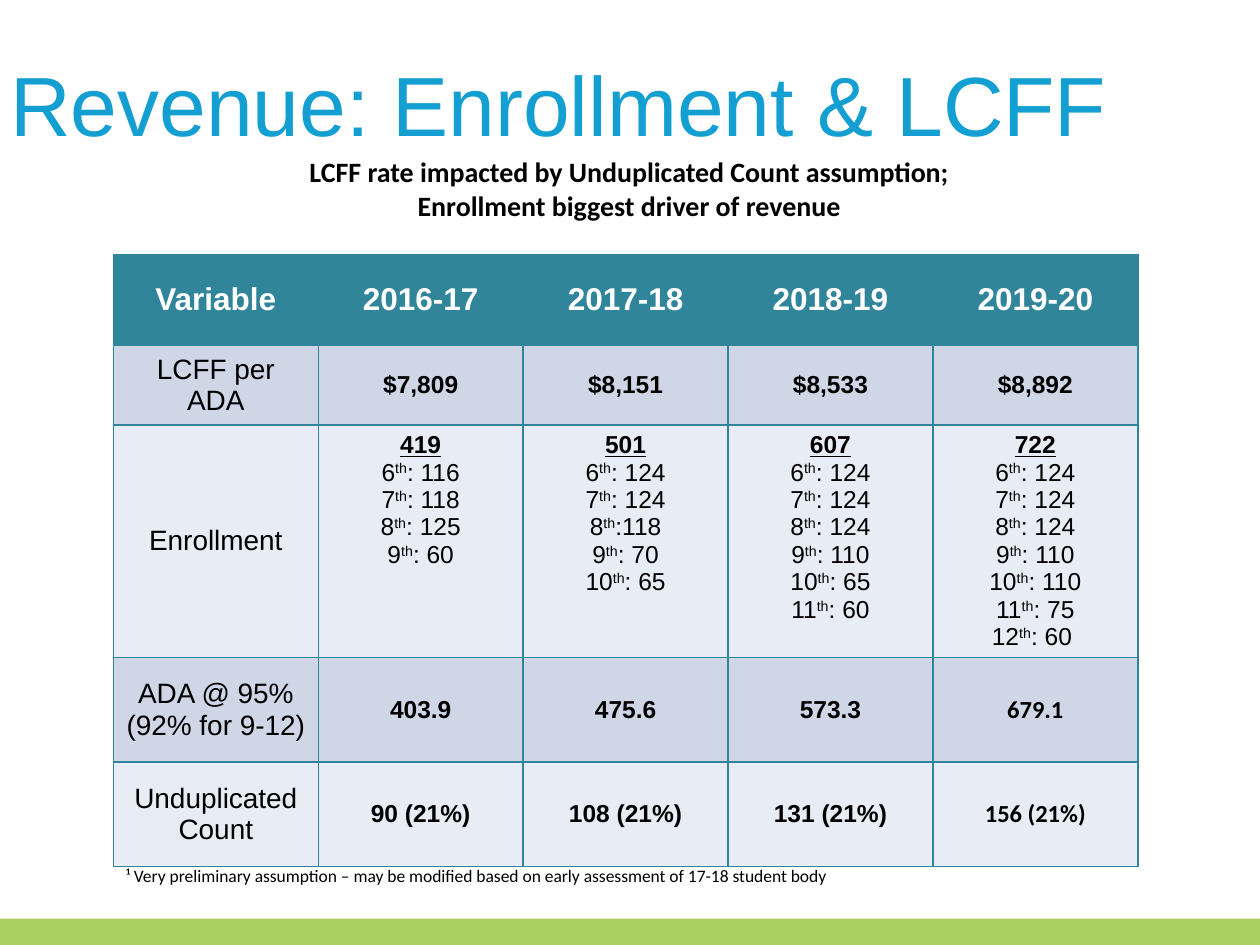
from pptx import Presentation
from pptx.dml.color import RGBColor
from pptx.enum.shapes import MSO_SHAPE as Shape
from pptx.enum.text import MSO_ANCHOR as Anchor, PP_ALIGN as Align
from pptx.oxml import parse_xml
from pptx.oxml.ns import nsdecls
from pptx.util import Inches, Pt

COLORS = {"title": "139FD2", "text": "000000", "white": "FFFFFF", "teal": "31859B",
          "dark": "CFD7E7", "light": "E8ECF4", "green": "ACCF62"}
HEADS = ["Variable", "2016-17", "2017-18", "2018-19", "2019-20"]
RATES = ["LCFF per ADA", "$7,809", "$8,151", "$8,533", "$8,892"]
ADA = ["ADA @ 95%\n(92% for 9-12)", "403.9", "475.6", "573.3", "679.1"]
COUNTS = ["Unduplicated Count", "90 (21%)", "108 (21%)", "131 (21%)", "156 (21%)"]
FIRST_GRADE = 6
# Each year: total, then the text after each grade from 6th upward
ENROLLED = [
    ("419", [": 116", ": 118", ": 125", ": 60"]),
    ("501", [": 124", ": 124", ":118", ": 70", ": 65"]),
    ("607", [": 124", ": 124", ": 124", ": 110", ": 65", ": 60"]),
    ("722", [": 124", ": 124", ": 124", ": 110", ": 110", ": 75", ": 60 "]),
]
ROW_HEIGHTS = [0.72, 0.63, 0.83, 0.83, 0.83]  # the enrollment row grows with its text


def rgb(name):
    return RGBColor.from_string(COLORS[name])


def style(para, size, face="Arial", color="text", bold=False, align=Align.CENTER):
    para.alignment = align
    font = para.font
    font.size, font.name, font.bold = Pt(size), face, bold
    font.color.rgb = rgb(color)


def fill_text(frame, text, size, **look):
    frame.text = text
    for para in frame.paragraphs:
        style(para, size, **look)


def add_title(slide, text):
    title = slide.shapes.title
    title.left, title.top = Inches(0.08), Inches(0.57)
    title.width, title.height = Inches(9.83), Inches(0.61)
    frame = title.text_frame
    frame.margin_left = frame.margin_right = frame.margin_top = frame.margin_bottom = 0
    frame.vertical_anchor = Anchor.TOP
    fill_text(frame, text, 48, color="title", align=Align.LEFT)
    frame.paragraphs[0].line_spacing = 0.8


def add_text(slide, box, text, size, **look):
    frame = slide.shapes.add_textbox(*map(Inches, box)).text_frame
    frame.word_wrap = True
    fill_text(frame, text, size, face="Calibri", **look)


def add_bar(slide):
    bar = slide.shapes.add_shape(Shape.RECTANGLE, 0, Inches(7.29), Inches(10), Inches(0.21))
    bar.shadow.inherit = False
    bar.fill.solid()
    bar.fill.fore_color.rgb = rgb("green")
    bar.line.fill.background()


def paint_cell(cell, color):
    """Give the cell its borders, then its fill."""
    props = cell._tc.get_or_add_tcPr()
    for side in "LRTB":
        props.append(parse_xml(
            f'<a:ln{side} {nsdecls("a")} w="12700"><a:solidFill>'
            f'<a:srgbClr val="{COLORS["teal"]}"/></a:solidFill></a:ln{side}>'))
    cell.fill.solid()
    cell.fill.fore_color.rgb = rgb(color)
    cell.vertical_anchor = Anchor.MIDDLE


def fill_grades(cell, total, counts):
    cell.vertical_anchor = Anchor.TOP
    frame = cell.text_frame
    fill_text(frame, total, 14, bold=True)
    frame.paragraphs[0].runs[0].font.underline = True
    for grade, count in enumerate(counts, FIRST_GRADE):
        para = frame.add_paragraph()
        style(para, 14)
        for part in (str(grade), "th", count):
            run = para.add_run()
            run.text = part
            if part == "th":
                run.font._element.set("baseline", "30000")
    for para in frame.paragraphs:
        para.line_spacing = Pt(15.7)
        for run in para.runs:
            run.font.size, run.font.name = Pt(14), "Arial"


def add_grid(slide):
    rows = [HEADS, RATES, ["Enrollment"] + ENROLLED, ADA, COUNTS]
    table = slide.shapes.add_table(len(rows), len(HEADS), Inches(0.9), Inches(2.02),
                                   Inches(8.13), Inches(sum(ROW_HEIGHTS))).table
    for row, height in zip(table.rows, ROW_HEIGHTS):
        row.height = Inches(height)
    for r, values in enumerate(rows):
        for c, value in enumerate(values):
            cell = table.cell(r, c)
            paint_cell(cell, "teal" if r == 0 else "dark" if r % 2 else "light")
            if r == 0:
                fill_text(cell.text_frame, value, 18, color="white", bold=True)
            elif c == 0:
                fill_text(cell.text_frame, value, 16)
            elif values[0] == "Enrollment":
                fill_grades(cell, *value)
            else:
                last = values in (ADA, COUNTS) and c == len(values) - 1
                fill_text(cell.text_frame, value, 14, bold=True,
                          face="Calibri" if last else "Arial")


def main():
    deck = Presentation()
    deck.slide_width, deck.slide_height = Inches(10), Inches(7.5)
    slide = deck.slides.add_slide(deck.slide_layouts[5])
    add_bar(slide)
    add_title(slide, "Revenue: Enrollment & LCFF")
    add_text(slide, (0.08, 1.18, 9.83, 0.62),
             "LCFF rate impacted by Unduplicated Count assumption;\n"
             "Enrollment biggest driver of revenue", 16, bold=True)
    add_grid(slide)
    add_text(slide, (0.9, 6.82, 7.7, 0.27),
             "¹ Very preliminary assumption – may be modified based on early "
             "assessment of 17-18 student body", 10, align=Align.LEFT)
    deck.save("out.pptx")


if __name__ == "__main__":
    main()
